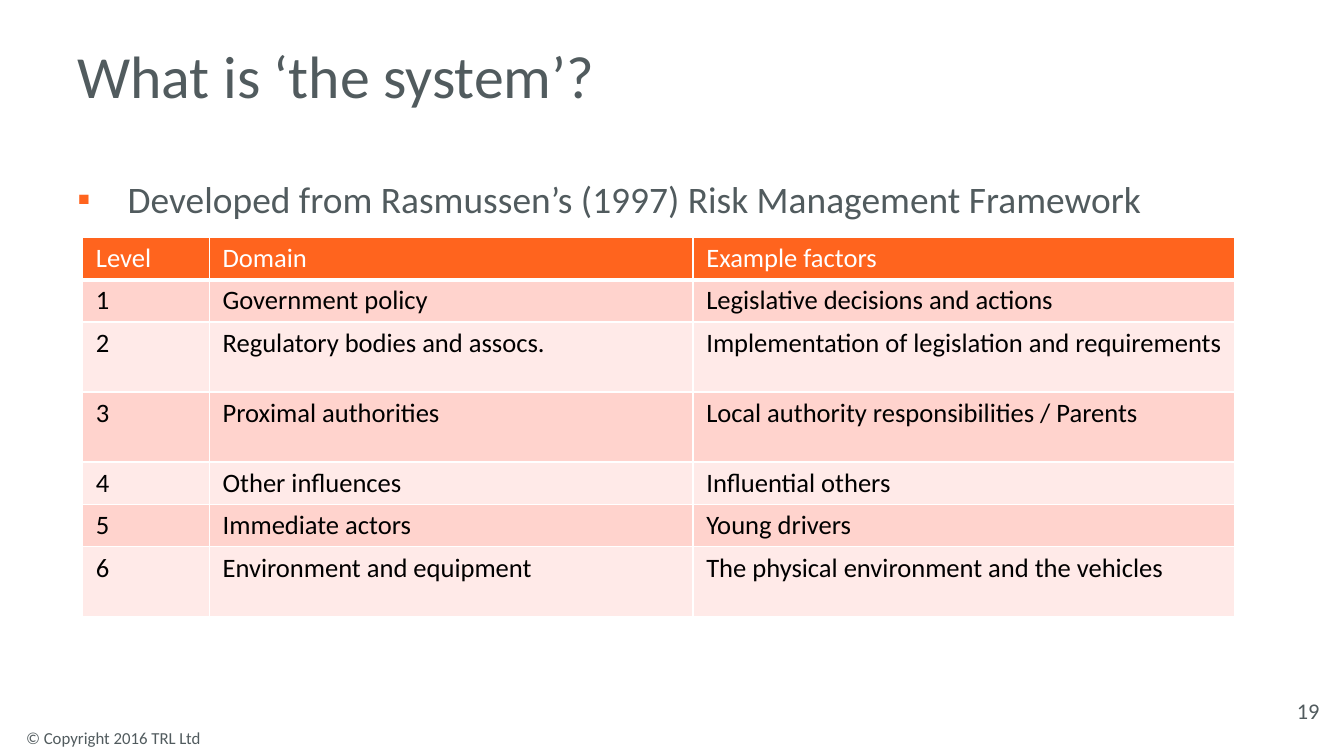
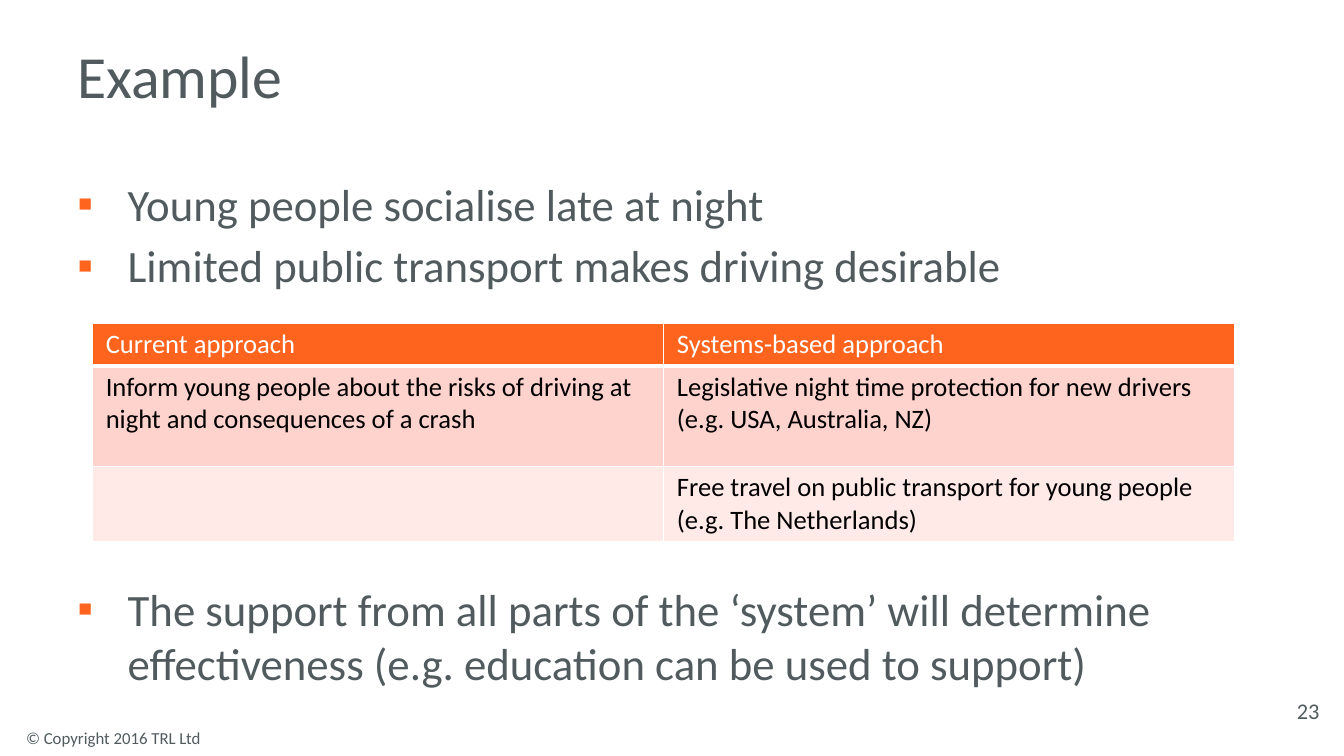
from dataclasses import dataclass

from lxml import etree
from pptx import Presentation
from pptx.dml.color import RGBColor
from pptx.enum import text
from pptx.oxml import ns
from pptx.util import Pt


# Theme: colours and type sizes
@dataclass(frozen=True)
class Theme:
    font: str = "Calibri"
    grey: str = "515B5E"
    orange: str = "FF641E"
    white: str = "FFFFFF"
    black: str = "000000"
    bands: tuple = ("FFD3CD", "FFEAE8")
    title: float = 42.7
    table: float = 19
    number: float = 16
    footer: float = 12


T = Theme()
COPYRIGHT = "© Copyright 2016 TRL Ltd"
LEFT, BODY_WIDTH = 48, 834
TABLE_RIGHT = LEFT + BODY_WIDTH


# Text
def add_run(p, words, size, color=T.grey):
    r = p.add_run()
    r.text = words
    r.font.name = T.font
    r.font.size = Pt(size)
    r.font.bold = False
    r.font.color.rgb = RGBColor.from_string(color)


def place(sp, left, top, width, height):
    sp.left, sp.top, sp.width, sp.height = map(Pt, (left, top, width, height))


def set_frame(tf, anchor):
    tf.word_wrap = True
    tf.auto_size = text.MSO_AUTO_SIZE.NONE
    tf.vertical_anchor = anchor


def add_label(s, box, words, size, align, anchor):
    sp = s.shapes.add_textbox(*map(Pt, box))
    set_frame(sp.text_frame, anchor)
    p = sp.text_frame.paragraphs[0]
    p.alignment = align
    add_run(p, words, size)


def set_bullet(p):
    pPr = p._p.get_or_add_pPr()
    pPr.set("marL", str(Pt(36)))
    pPr.set("indent", str(Pt(-36)))
    color = etree.SubElement(pPr, ns.qn("a:buClr"))
    etree.SubElement(color, ns.qn("a:srgbClr"), val=T.orange)
    etree.SubElement(pPr, ns.qn("a:buChar"), char="▪")


# Slide frame: title, copyright line and slide number
def add_slide(prs, title, number):
    s = prs.slides.add_slide(prs.slide_layouts[1])
    sp = s.shapes.title
    place(sp, LEFT, 21, 740, 65)
    set_frame(sp.text_frame, text.MSO_ANCHOR.MIDDLE)
    p = sp.text_frame.paragraphs[0]
    p.alignment = text.PP_ALIGN.LEFT
    add_run(p, title, T.title)
    add_label(s, (11.5, 516, 157, 22), COPYRIGHT, T.footer,
              text.PP_ALIGN.LEFT, text.MSO_ANCHOR.TOP)
    add_label(s, (912, 493, 45, 29), number, T.number,
              text.PP_ALIGN.CENTER, text.MSO_ANCHOR.MIDDLE)
    return s


# Bulleted list: each item is its words and the space before it
def add_bullets(s, height, size, items):
    sp = s.placeholders[1]
    place(sp, LEFT, 122.4, BODY_WIDTH, height)
    tf = sp.text_frame
    set_frame(tf, text.MSO_ANCHOR.TOP)
    for i, (words, before) in enumerate(items):
        p = tf.add_paragraph() if i else tf.paragraphs[0]
        set_bullet(p)
        p.space_before = Pt(before)
        add_run(p, words, size)


# Table
def set_borders(cell, bottom):
    tcPr = cell._tc.get_or_add_tcPr()
    for side, width in (("L", 1), ("R", 1), ("T", 1), ("B", bottom)):
        ln = etree.SubElement(tcPr, ns.qn(f"a:ln{side}"), w=str(Pt(width)))
        fill = etree.SubElement(ln, ns.qn("a:solidFill"))
        etree.SubElement(fill, ns.qn("a:srgbClr"), val=T.white)


def format_cell(cell, words, header, fill):
    set_borders(cell, 3 if header else 1)
    cell.fill.solid()
    cell.fill.fore_color.rgb = RGBColor.from_string(fill)
    cell.margin_left = cell.margin_right = Pt(9.6)
    cell.margin_top = cell.margin_bottom = Pt(3.6)
    if words:
        add_run(cell.text_frame.paragraphs[0], words, T.table,
                T.white if header else T.black)


def add_grid(s, top, widths, heights, rows):
    total = sum(widths)
    frame = s.shapes.add_table(len(rows), len(widths), Pt(TABLE_RIGHT - total),
                               Pt(top), Pt(total), Pt(sum(heights)))
    table = frame.table
    for column, width in zip(table.columns, widths):
        column.width = Pt(width)
    for i, (row, height, words) in enumerate(zip(table.rows, heights, rows)):
        row.height = Pt(height)
        fill = T.bands[(i - 1) % 2] if i else T.orange
        for cell, word in zip(row.cells, words):
            format_cell(cell, word, i == 0, fill)


# Slides
def add_system_slide(prs):
    s = add_slide(prs, "What is ‘the system’?", "19")
    add_bullets(s, 33, 26.7, [
        ("Developed from Rasmussen’s (1997) Risk Management Framework", 0)])
    add_grid(s, 169.5, (90.5, 345.5, 387), (30, 30, 50, 50, 30, 30, 50), [
        ("Level", "Domain", "Example factors"),
        ("1", "Government policy", "Legislative decisions and actions"),
        ("2", "Regulatory bodies and assocs.",
         "Implementation of legislation and requirements"),
        ("3", "Proximal authorities",
         "Local authority responsibilities / Parents"),
        ("4", "Other influences", "Influential others"),
        ("5", "Immediate actors", "Young drivers"),
        ("6", "Environment and equipment",
         "The physical environment and the vehicles")])


def add_example_slide(prs):
    s = add_slide(prs, "Example", "23")
    add_bullets(s, 362, 32, [
        ("Young people socialise late at night", 0),
        ("Limited public transport makes driving desirable", 5.5),
        ("The support from all parts of the ‘system’ will determine "
         "effectiveness (e.g. education can be used to support)", 207)])
    add_grid(s, 231, (408, 408), (30, 72, 52), [
        ("Current approach", "Systems-based approach"),
        ("Inform young people about the risks of driving at night and "
         "consequences of a crash",
         "Legislative night time protection for new drivers "
         "(e.g. USA, Australia, NZ)"),
        ("", "Free travel on public transport for young people "
             "(e.g. The Netherlands)")])


def main():
    prs = Presentation()
    prs.slide_width, prs.slide_height = Pt(960), Pt(540)
    add_system_slide(prs)
    add_example_slide(prs)
    prs.save("out.pptx")


if __name__ == "__main__":
    main()
